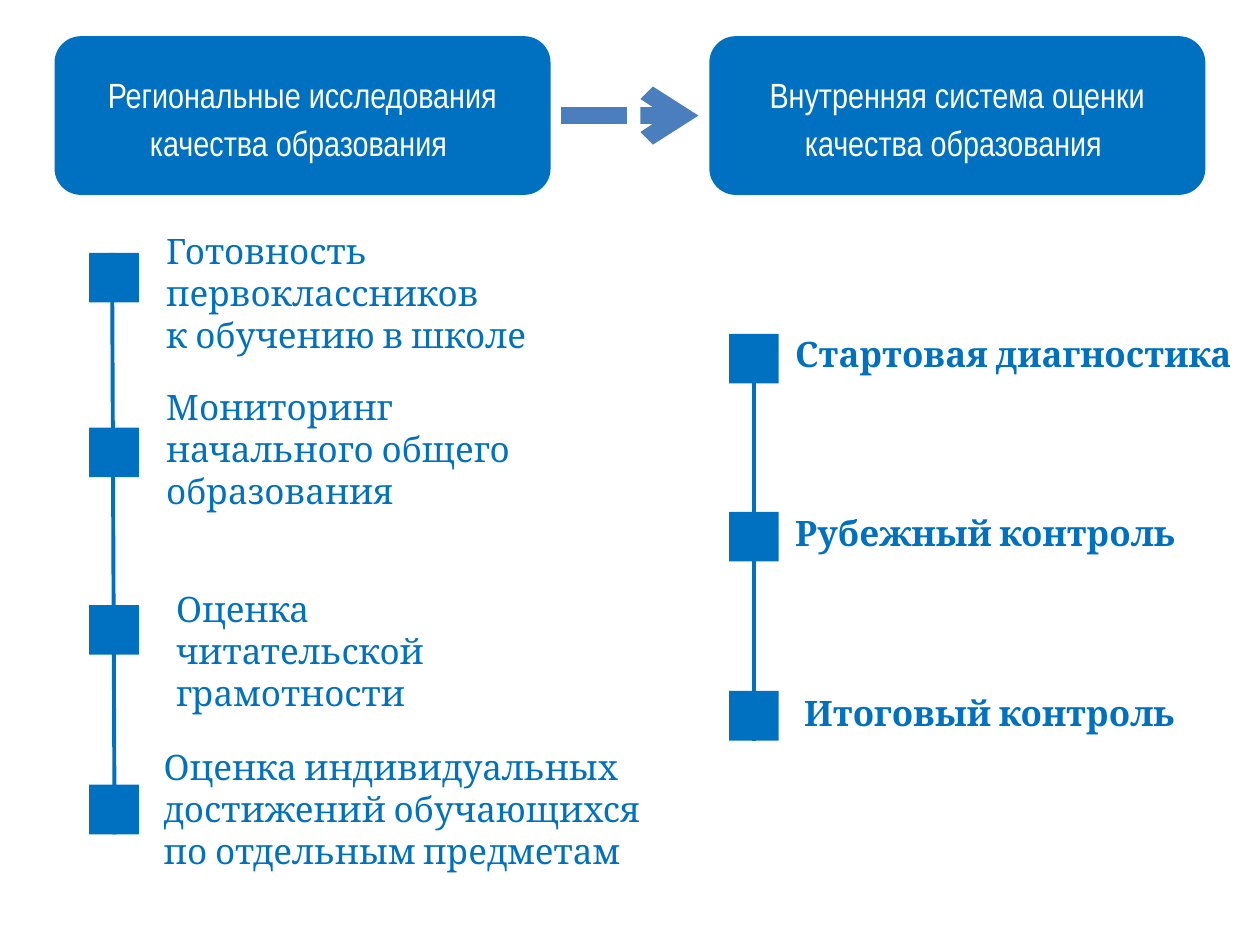
import pptx
import pptx.util
import pptx.dml.color
import pptx.enum.dml
import pptx.enum.shapes
import pptx.enum.text
from lxml import etree
from pptx.util import Cm

BLUE = "0070C0"
ARROW_BLUE = "4B7EBC"
WHITE = "FFFFFF"


def color(hex_string):
    return pptx.dml.color.RGBColor.from_string(hex_string)


class SlideBuilder:
    text_size = pptx.util.Pt(20)
    marker_size = Cm(1)

    def __init__(self, slide):
        self.slide = slide

    def filled_shape(self, kind, left, top, width, height):
        shape = self.slide.shapes.add_shape(kind, left, top, width, height)
        shape.shadow.inherit = False
        shape.fill.solid()
        shape.fill.fore_color.rgb = color(BLUE)
        shape.line.fill.background()
        return shape

    def style_text(self, paragraph, font_name, hex_string, bold=False):
        paragraph.font.name = font_name
        paragraph.font.size = self.text_size
        paragraph.font.bold = bold
        paragraph.font.color.rgb = color(hex_string)

    def header(self, text, left):
        shape = self.filled_shape(pptx.enum.shapes.MSO_SHAPE.ROUNDED_RECTANGLE,
                                  Cm(left), Cm(0.73), Cm(10), Cm(3.2))
        frame = shape.text_frame
        frame.word_wrap = True
        frame.vertical_anchor = pptx.enum.text.MSO_ANCHOR.MIDDLE
        paragraph = frame.paragraphs[0]
        paragraph.text = text
        paragraph.alignment = pptx.enum.text.PP_ALIGN.CENTER
        paragraph.line_spacing = 1.15
        self.style_text(paragraph, "Arial Narrow", WHITE)

    def marker(self, left, top):
        self.filled_shape(pptx.enum.shapes.MSO_SHAPE.RECTANGLE,
                          Cm(left), Cm(top), self.marker_size, self.marker_size)

    def label(self, text, left, top, width, height, bold):
        box = self.slide.shapes.add_textbox(Cm(left), Cm(top), Cm(width), Cm(height))
        frame = box.text_frame
        frame.word_wrap = True
        frame.auto_size = pptx.enum.text.MSO_AUTO_SIZE.SHAPE_TO_FIT_TEXT
        paragraph = frame.paragraphs[0]
        paragraph.text = text
        self.style_text(paragraph, "Cambria", BLUE, bold)

    def line(self, start, end, hex_string=BLUE, width=2.25):
        connector = self.slide.shapes.add_connector(
            pptx.enum.shapes.MSO_CONNECTOR.STRAIGHT,
            Cm(start[0]), Cm(start[1]), Cm(end[0]), Cm(end[1]))
        connector.line.color.rgb = color(hex_string)
        connector.line.width = pptx.util.Pt(width)
        etree.SubElement(connector._element.spPr, pptx.oxml.ns.qn("a:effectLst"))
        return connector

    def dashed_arrow(self, start, end):
        connector = self.line(start, end, ARROW_BLUE, 9.5)
        connector.line.dash_style = pptx.enum.dml.MSO_LINE.DASH
        etree.SubElement(connector.line._get_or_add_ln(),
                         pptx.oxml.ns.qn("a:tailEnd"), type="arrow")

    def timeline(self, marker_left, items, line_start, line_end, bold=False):
        self.line(line_start, line_end)
        for marker_top, text, *box in items:
            self.marker(marker_left, marker_top)
            self.label(text, *box, bold)


def main():
    presentation = pptx.Presentation()
    presentation.slide_width = Cm(25.4)
    presentation.slide_height = Cm(19.05)
    slide = presentation.slides.add_slide(presentation.slide_layouts[6])
    builder = SlideBuilder(slide)

    # Headers and the arrow between them
    builder.header("Региональные исследования качества образования ", 1.1)
    builder.header("Внутренняя система оценки качества образования ", 14.3)
    builder.dashed_arrow((11.3, 2.33), (14.08, 2.33))

    # Regional studies: marker top, text, then box left, top, width, height
    regional = [
        (5.1, "Готовность первоклассников \vк обучению в школе", 3.1, 4.5, 10.46, 1.96),
        (8.62, "Мониторинг начального общего образования", 3.1, 7.65, 8.2, 2.82),
        (12.2, "Оценка читательской грамотности", 3.3, 11.72, 7.98, 1.96),
        (15.82, "Оценка индивидуальных достижений обучающихся\vпо отдельным предметам",
         3.05, 14.91, 11.5, 2.82),
    ]
    builder.timeline(1.8, regional, (2.26, 5.1), (2.31, 16.82))

    # Internal assessment
    internal = [
        (6.73, "Стартовая диагностика", 15.78, 6.58, 10.72, 1.12),
        (10.32, "Рубежный контроль", 15.78, 10.19, 10.97, 1.12),
        (13.93, "Итоговый контроль", 15.96, 13.82, 10.72, 1.12),
    ]
    builder.timeline(14.7, internal, (15.2, 6.73), (15.2, 14.93), bold=True)

    presentation.save("out.pptx")


if __name__ == "__main__":
    main()
